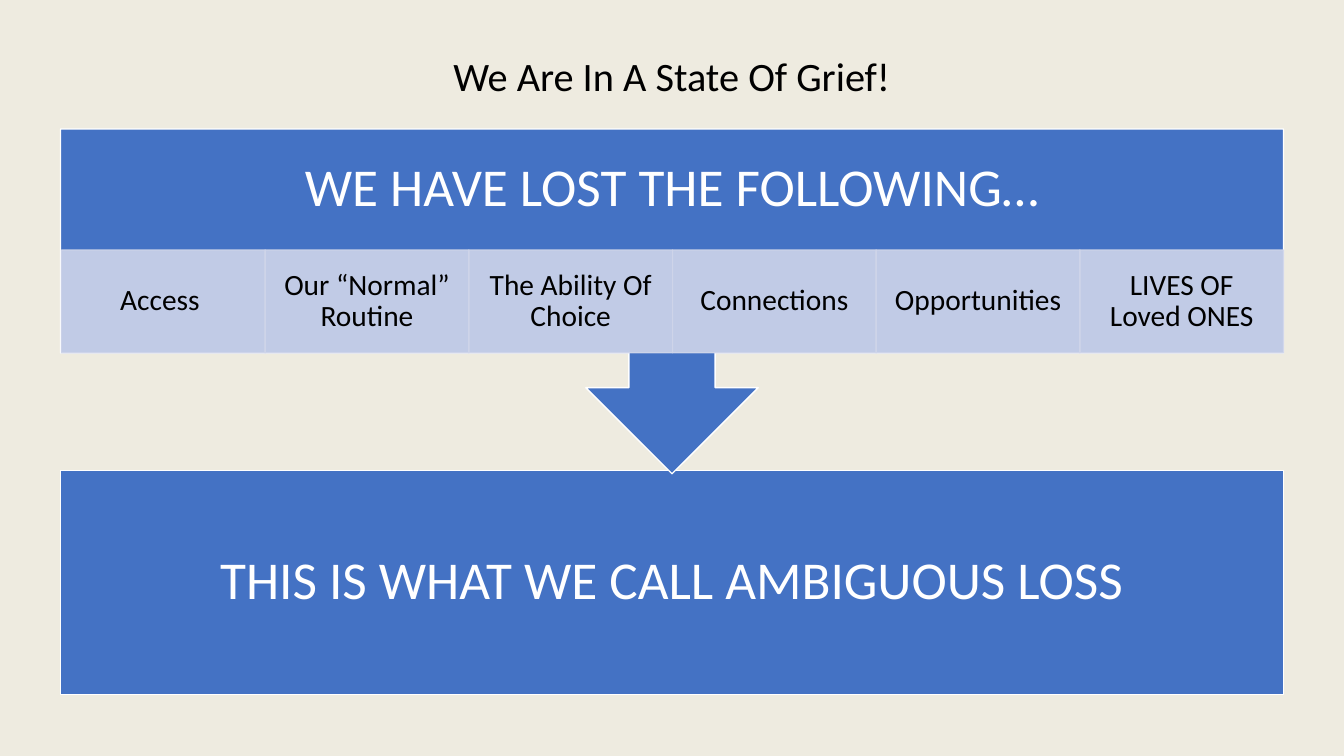
from dataclasses import dataclass

from lxml.etree import SubElement
from pptx import Presentation
from pptx.dml.color import RGBColor
from pptx.enum.shapes import MSO_SHAPE as Shape
from pptx.enum.text import MSO_ANCHOR as Anchor, PP_ALIGN as Align
from pptx.oxml.ns import qn
from pptx.util import Inches, Pt


@dataclass(frozen=True)
class Theme:
    """Colours, font and type sizes of the slide."""
    font: str = "Calibri"
    base: str = "F2F2F2"
    tint: str = "BF9000"
    blue: str = "4472C4"
    pale: str = "CFD5EA"
    white: str = "FFFFFF"
    black: str = "000000"
    title_size: float = 28.8
    banner_size: float = 38
    item_size: float = 21


class SlideBuilder:
    """Adds styled elements to one slide."""

    def __init__(self, slide, theme):
        self.slide = slide
        self.theme = theme

    def paint(self, fill, color, opacity):
        """Set a solid colour with an opacity in percent."""
        fill.solid()
        fill.fore_color.rgb = RGBColor.from_string(color)
        if opacity < 100:
            color_element = fill._xPr.find(qn("a:solidFill"))[0]
            SubElement(color_element, qn("a:alpha"), val=str(opacity * 1000))

    def block(self, kind, box, fill, line=None, opacity=100):
        """Add a filled preset shape."""
        shape = self.slide.shapes.add_shape(kind, *map(Inches, box))
        shape.shadow.inherit = False
        self.paint(shape.fill, fill, opacity)
        if line:
            self.paint(shape.line.fill, line, opacity)
            shape.line.width = Pt(1)
        else:
            shape.line.fill.background()
        return shape

    def add_text(self, shape, text, size, color, insets=(0.1, 0.05)):
        """Put centred text into a shape."""
        frame = shape.text_frame
        frame.word_wrap = True
        frame.vertical_anchor = Anchor.MIDDLE
        frame.margin_left = frame.margin_right = Inches(insets[0])
        frame.margin_top = frame.margin_bottom = Inches(insets[1])
        paragraph = frame.paragraphs[0]
        paragraph.alignment = Align.CENTER
        paragraph.line_spacing = 0.9
        run = paragraph.add_run()
        run.text = text
        run.font.name = self.theme.font
        run.font.size = Pt(size)
        run.font.color.rgb = RGBColor.from_string(color)

    def label(self, box, text, size, color, insets=(0.1, 0.05)):
        """Add a text box."""
        shape = self.slide.shapes.add_textbox(*map(Inches, box))
        self.add_text(shape, text, size, color, insets)


def main():
    """Build and save the slide."""
    theme = Theme()
    presentation = Presentation()
    presentation.slide_width = Inches(13.33)
    presentation.slide_height = Inches(7.5)
    slide = presentation.slides.add_slide(presentation.slide_layouts[6])
    builder = SlideBuilder(slide, theme)

    full_slide = (0, 0, 13.33, 7.5)
    builder.block(Shape.RECTANGLE, full_slide, theme.base)
    builder.block(Shape.RECTANGLE, full_slide, theme.tint, opacity=7)

    left, width = 0.6, 12.13
    builder.label((left, 0.5, width, 0.55), "We Are In A State Of Grief!",
                  theme.title_size, theme.black)

    banner_insets = (0.3, 0.3)
    conclusion = builder.block(Shape.RECTANGLE, (left, 4.67, width, 2.22),
                               theme.blue, theme.white)
    builder.add_text(conclusion, "THIS IS WHAT WE CALL AMBIGUOUS LOSS",
                     theme.banner_size, theme.white, banner_insets)

    callout = builder.block(Shape.UP_ARROW_CALLOUT, (left, 1.28, width, 3.42),
                            theme.blue, theme.white)
    callout.rotation = 180
    builder.label((left, 1.28, width, 1.2), "WE HAVE LOST THE FOLLOWING…",
                  theme.banner_size, theme.white, banner_insets)

    losses = ["Access ", "Our “Normal” Routine", "The Ability Of Choice",
              "Connections", "Opportunities", "LIVES OF Loved ONES"]
    item_width = 2.02
    for index, loss in enumerate(losses):
        box = (0.61 + index * item_width, 2.48, item_width, 1.02)
        item = builder.block(Shape.RECTANGLE, box, theme.pale, theme.pale, 90)
        builder.add_text(item, loss, theme.item_size, theme.black, (0.16, 0.03))

    presentation.save("out.pptx")


if __name__ == "__main__":
    main()
